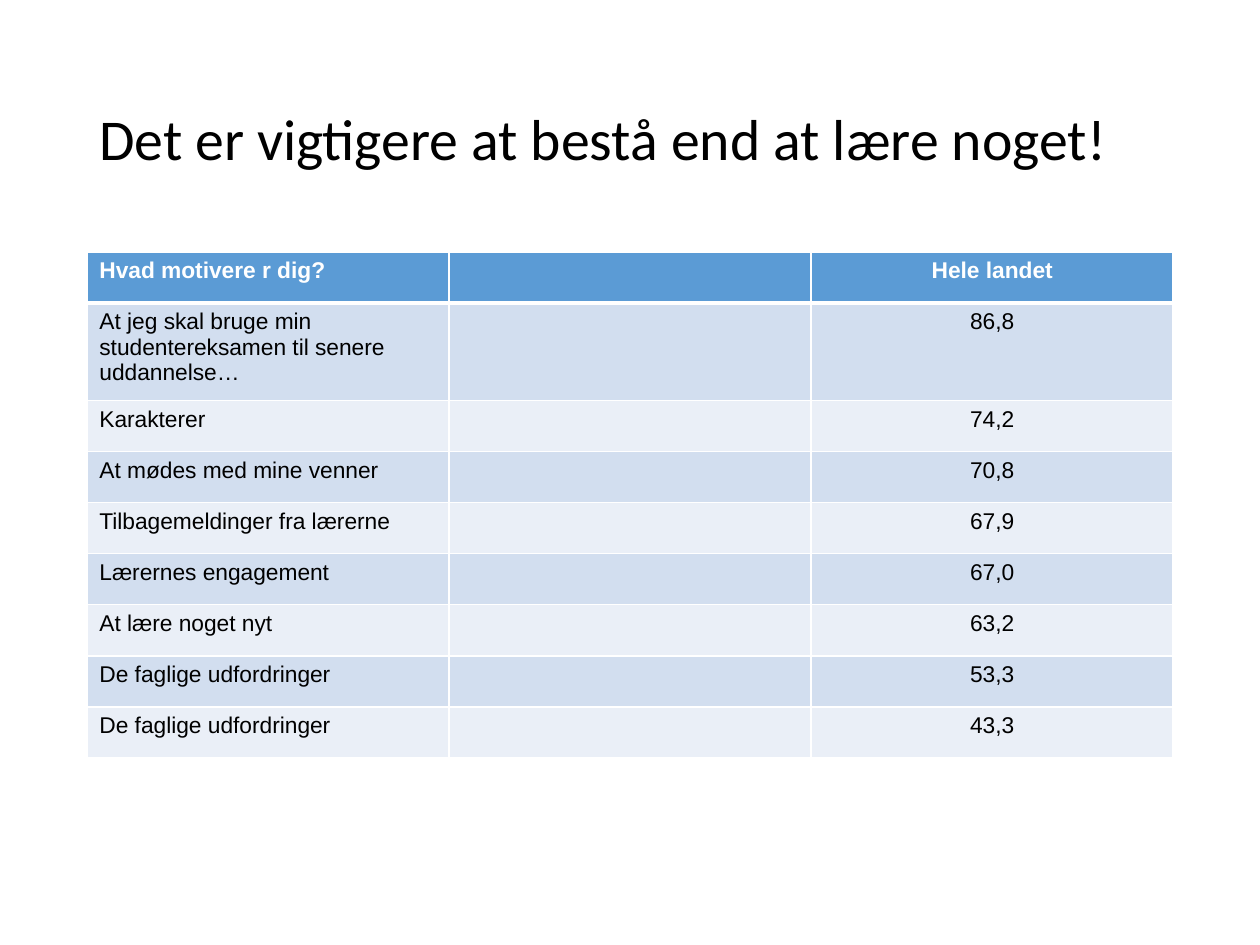
from lxml import etree
from pptx import Presentation
from pptx.dml.color import RGBColor
from pptx.enum.text import MSO_ANCHOR, PP_ALIGN
from pptx.oxml.ns import qn
from pptx.util import Cm, Pt

LEFT, CENTER = PP_ALIGN.LEFT, PP_ALIGN.CENTER
MIDDLE = MSO_ANCHOR.MIDDLE

TITLE = "Det er vigtigere at bestå end at lære noget!"
HEADER = ("Hvad motivere r dig?", "", "Hele landet")
ANSWERS = [
    ("At jeg skal bruge min studentereksamen til senere uddannelse…", "", "86,8"),
    ("Karakterer", "", "74,2"),
    ("At mødes med mine venner", "", "70,8"),
    ("Tilbagemeldinger fra lærerne", "", "67,9"),
    ("Lærernes engagement", "", "67,0"),
    ("At lære noget nyt", "", "63,2"),
    ("De faglige udfordringer", "", "53,3"),
    ("De faglige udfordringer", "", "43,3"),
]
ALIGNMENTS = (LEFT, CENTER, CENTER)

THEME = {
    "title_font": "Calibri", "title_size": 33,
    "table_font": "Arial", "table_size": 13,
    "text": "000000", "header_text": "FFFFFF", "header_fill": "5B9BD5",
    "bands": ("D2DEEF", "EAEFF7"), "border": "FFFFFF",
    "border_width": 1, "header_rule_width": 3,
}

MARGIN, CONTENT_WIDTH = 1.75, 21.9
TITLE_TOP, TITLE_HEIGHT = 1.02, 3.68
TABLE_TOP, ROW_HEIGHT, TALL_ROW_HEIGHT = 5.08, 1.03, 1.96
TALL_ROW = 1


def add_run(paragraph, text, font, size, color, bold=False):
    run = paragraph.add_run()
    run.text = text
    run.font.name = font
    run.font.size = Pt(size)
    run.font.bold = bold
    run.font.color.rgb = RGBColor.from_string(color)


def set_borders(cell, top, bottom):
    properties = cell._tc.get_or_add_tcPr()
    side = THEME["border_width"]
    widths = {"a:lnL": side, "a:lnR": side, "a:lnT": top, "a:lnB": bottom}
    for position, (edge, width) in enumerate(widths.items()):
        line = etree.Element(qn(edge), w=str(Pt(width)))
        fill = etree.SubElement(line, qn("a:solidFill"))
        etree.SubElement(fill, qn("a:srgbClr"), val=THEME["border"])
        properties.insert(position, line)


def add_title(slide):
    title = slide.shapes.add_textbox(
        Cm(MARGIN), Cm(TITLE_TOP), Cm(CONTENT_WIDTH), Cm(TITLE_HEIGHT))
    frame = title.text_frame
    frame.word_wrap = True
    frame.vertical_anchor = MIDDLE
    paragraph = frame.paragraphs[0]
    paragraph.line_spacing = 0.9
    add_run(paragraph, TITLE, THEME["title_font"], THEME["title_size"], THEME["text"])


def add_motivation_table(slide):
    rows = [HEADER, *ANSWERS]
    heights = [TALL_ROW_HEIGHT if i == TALL_ROW else ROW_HEIGHT for i in range(len(rows))]
    table = slide.shapes.add_table(
        len(rows), len(HEADER), Cm(MARGIN), Cm(TABLE_TOP),
        Cm(CONTENT_WIDTH), Cm(sum(heights))).table
    for column in table.columns:
        column.width = Cm(CONTENT_WIDTH / len(HEADER))
    thin, thick = THEME["border_width"], THEME["header_rule_width"]
    for i, (texts, height) in enumerate(zip(rows, heights)):
        table.rows[i].height = Cm(height)
        is_header = i == 0
        fill = THEME["header_fill"] if is_header else THEME["bands"][(i - 1) % 2]
        color = THEME["header_text"] if is_header else THEME["text"]
        for j, (text, alignment) in enumerate(zip(texts, ALIGNMENTS)):
            cell = table.cell(i, j)
            cell.fill.solid()
            cell.fill.fore_color.rgb = RGBColor.from_string(fill)
            set_borders(cell, thick if i == 1 else thin, thick if is_header else thin)
            paragraph = cell.text_frame.paragraphs[0]
            paragraph.alignment = alignment
            if text:
                add_run(paragraph, text, THEME["table_font"], THEME["table_size"],
                        color, is_header)


def main():
    presentation = Presentation()
    presentation.slide_width, presentation.slide_height = Cm(25.4), Cm(19.05)
    slide = presentation.slides.add_slide(presentation.slide_layouts[6])
    add_title(slide)
    add_motivation_table(slide)
    presentation.save("out.pptx")


if __name__ == "__main__":
    main()
